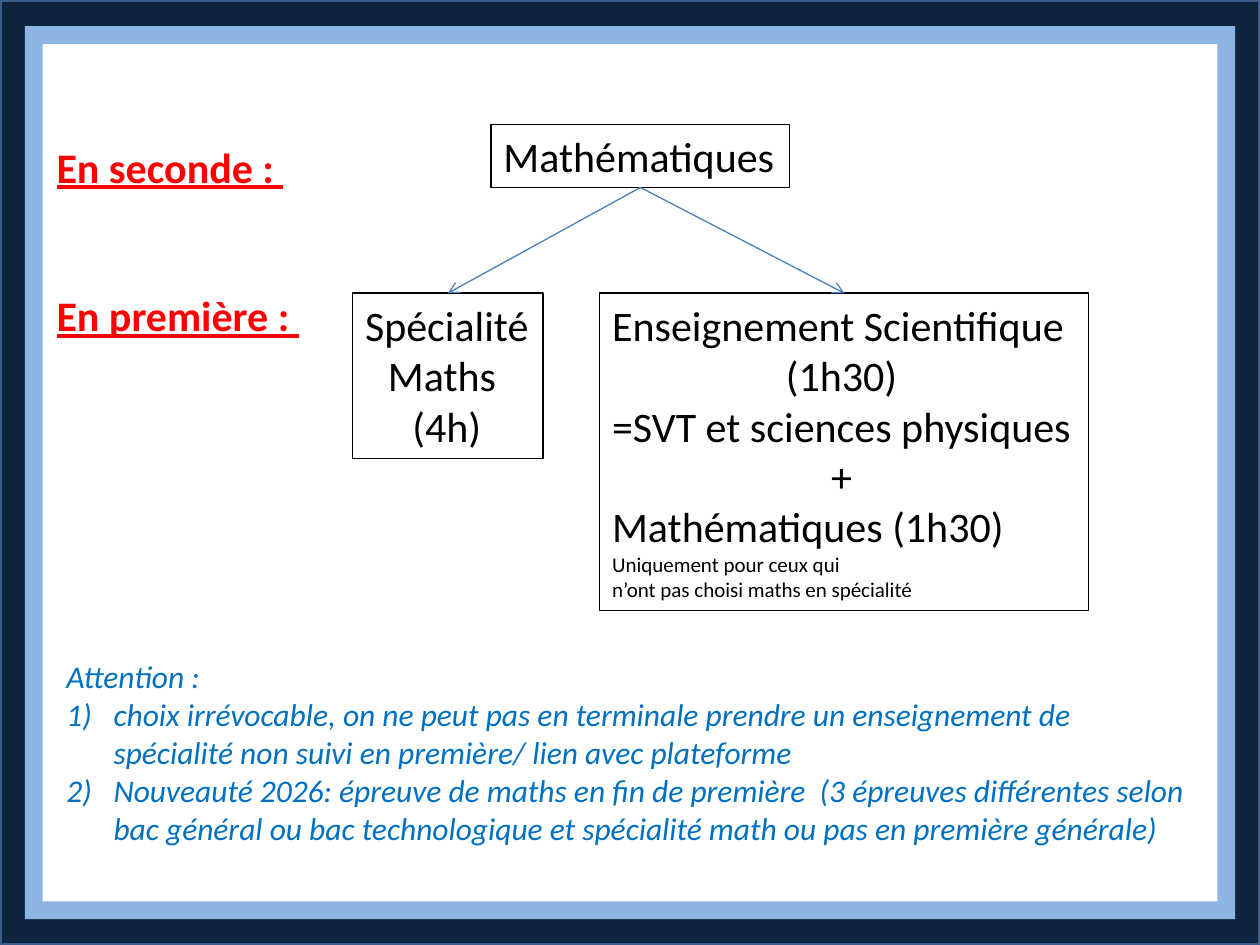
from collections import namedtuple
from dataclasses import dataclass

from lxml import etree
from pptx import Presentation
from pptx import util as u
from pptx.dml.color import RGBColor
from pptx.enum import shapes, text
from pptx.oxml import ns

Box = namedtuple("Box", "left top width height")


@dataclass(frozen=True)
class Theme:
    """Colours, font and type sizes of the slide."""
    font: str = "Calibri"
    navy: str = "0F243E"
    navy_edge: str = "3A5F8C"
    sky: str = "8EB4E3"
    red: str = "FF0000"
    black: str = "000000"
    arrow: str = "4B7EBC"
    blue: str = "0070C0"
    large: int = 24
    medium: int = 18
    small: int = 12
    thin: float = 0.75


THEME = Theme()
HEADING = {"size": THEME.large, "color": THEME.red, "bold": True, "underline": True}
BODY = {"size": THEME.large, "color": THEME.black}
NOTE = {"size": THEME.small, "color": THEME.black}
WARNING = {"size": THEME.medium, "color": THEME.blue, "italic": True}


def inside(box, left, top, width, height):
    """Return a box placed relative to the corner of another."""
    return Box(box.left + left, box.top + top, width, height)


def lengths(box):
    """Return the four measures of a box in centimetres."""
    return [u.Cm(value) for value in box]


def style_line(line, color, width):
    """Give a line its colour and its width in points."""
    line.color.rgb = RGBColor.from_string(color)
    line.width = u.Pt(width)


def write(para, words, style):
    """Add words to a paragraph in the given style."""
    span = para.add_run()
    span.text = words
    values = {**style, "name": THEME.font, "size": u.Pt(style["size"])}
    span.font.color.rgb = RGBColor.from_string(values.pop("color"))
    for name, value in values.items():
        setattr(span.font, name, value)


def add_text(page, box, lines, wrap=False):
    """Add a text box from lines of words, style and alignment."""
    holder = page.shapes.add_textbox(*lengths(box))
    frame = holder.text_frame
    frame.word_wrap = wrap
    frame.auto_size = text.MSO_AUTO_SIZE.SHAPE_TO_FIT_TEXT
    for index, (words, style, align) in enumerate(lines):
        para = frame.add_paragraph() if index else frame.paragraphs[0]
        para.alignment = align
        write(para, words, style)
    return holder


def add_border(page, box, color, ratio, edge=None):
    """Add one picture-frame band with an optional outline."""
    band = page.shapes.add_shape(shapes.MSO_SHAPE.FRAME, *lengths(box))
    band.shadow.inherit = False
    band.adjustments[0] = ratio
    band.fill.solid()
    band.fill.fore_color.rgb = RGBColor.from_string(color)
    if edge:
        style_line(band.line, edge, 2)
    else:
        band.line.fill.background()


def add_borders(page, box):
    """Add the dark outer band and the light inner band."""
    add_border(page, box, THEME.navy, 0.029, THEME.navy_edge)
    add_border(page, inside(box, 0.5, 0.53, 24.4, 18), THEME.sky, 0.02)


def add_stages(page, box):
    """Add the two school-year headings down the left side."""
    left = text.PP_ALIGN.LEFT
    stages = [("En seconde : ", 0, 5.13), ("En première : ", 3, 5.44)]
    for words, top, width in stages:
        add_text(page, inside(box, 0, top, width, 1.27), [(words, HEADING, left)])


def add_arrow(page, start, end):
    """Join the bottom of one box to the top of another with an arrow."""
    arrow = page.shapes.add_connector(shapes.MSO_CONNECTOR.STRAIGHT, 0, 0, 0, 0)
    arrow.begin_connect(start, 2)
    arrow.end_connect(end, 0)
    style_line(arrow.line, THEME.arrow, THEME.thin)
    etree.SubElement(arrow.line._get_or_add_ln(), ns.qn("a:tailEnd"), type="arrow")
    etree.SubElement(arrow._element.spPr, ns.qn("a:effectLst"))


def add_choices(page, box):
    """Add the subject box and the two courses it leads to."""
    left, center = text.PP_ALIGN.LEFT, text.PP_ALIGN.CENTER
    subject = [("Mathématiques", BODY, left)]
    speciality = [
        ("Spécialité", BODY, left),
        ("Maths ", BODY, center),
        ("(4h)", BODY, center),
    ]
    science = [
        ("Enseignement Scientifique", BODY, left),
        ("(1h30)", BODY, center),
        ("=SVT et sciences physiques", BODY, left),
        ("+", BODY, center),
        ("Mathématiques (1h30)", BODY, left),
        ("Uniquement pour ceux qui", NOTE, left),
        ("n’ont pas choisi maths en spécialité", NOTE, left),
    ]
    places = [
        (subject, (2.79, 0, 6.02, 1.27)),
        (speciality, (0, 3.4, 3.84, 3.33)),
        (science, (4.98, 3.4, 9.86, 6.4)),
    ]
    root, *courses = [add_text(page, inside(box, *place), lines) for lines, place in places]
    for holder in (root, *courses):
        style_line(holder.line, THEME.black, THEME.thin)
    for course in courses:
        add_arrow(page, root, course)


def add_warning(page, box):
    """Add the warning with its numbered points."""
    lines = [
        "Attention :",
        "choix irrévocable, on ne peut pas en terminale prendre un enseignement de "
        "spécialité non suivi en première/ lien avec plateforme",
        "Nouveauté 2026: épreuve de maths en fin de première  (3 épreuves différentes "
        "selon bac général ou bac technologique et spécialité math ou pas en première "
        "générale)",
    ]
    styled = [(words, WARNING, text.PP_ALIGN.LEFT) for words in lines]
    holder = add_text(page, box, styled, wrap=True)
    indent = u.Cm(0.95)
    for para in holder.text_frame.paragraphs[1:]:
        props = para._p.get_or_add_pPr()
        props.set("marL", str(indent))
        props.set("indent", str(-indent))
        etree.SubElement(props, ns.qn("a:buFont"), typeface="+mj-lt")
        etree.SubElement(props, ns.qn("a:buAutoNum"), type="arabicParenR")


def main():
    """Build the slide and save it."""
    deck = Presentation()
    deck.slide_width, deck.slide_height = u.Cm(25.4), u.Cm(19.05)
    page = deck.slides.add_slide(deck.slide_layouts[6])
    add_borders(page, Box(0, 0, 25.4, 19.05))
    add_stages(page, Box(0.89, 2.72, 5.44, 4.27))
    add_choices(page, Box(7.11, 2.51, 14.84, 9.8))
    add_warning(page, Box(1.09, 13.13, 23.19, 4.11))
    deck.save("out.pptx")


if __name__ == "__main__":
    main()
